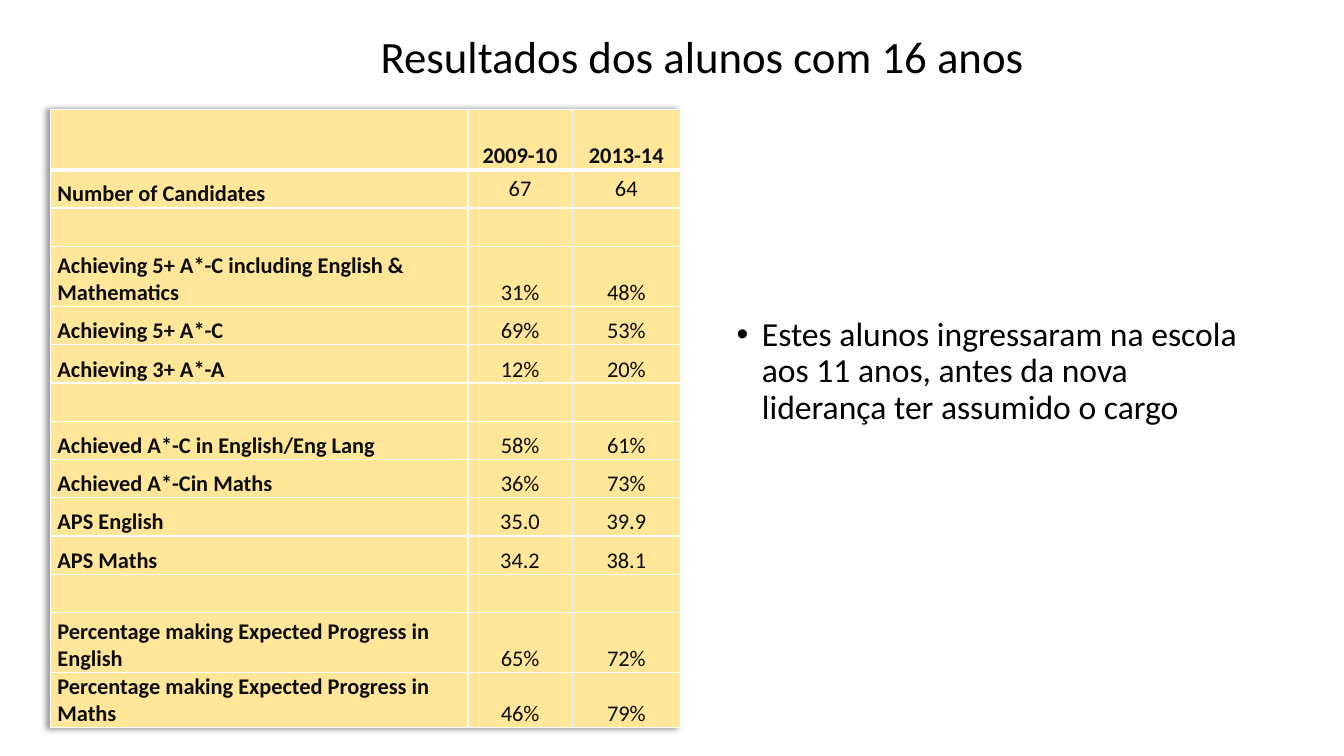
from lxml import etree
from pptx import Presentation
from pptx.dml.color import RGBColor
from pptx.enum.text import MSO_ANCHOR, PP_ALIGN
from pptx.oxml import parse_xml
from pptx.oxml.ns import nsdecls, qn
from pptx.util import Inches, Pt

CENTER, LEFT = PP_ALIGN.CENTER, PP_ALIGN.LEFT
BOTTOM, MIDDLE, TOP = MSO_ANCHOR.BOTTOM, MSO_ANCHOR.MIDDLE, MSO_ANCHOR.TOP
HUES = {"text": "000000", "cell": "0D0D0D", "sand": "FFE699", "rule": "FFFFFF"}

deck = Presentation()
deck.slide_width, deck.slide_height = Inches(13.33), Inches(7.5)
slide = deck.slides.add_slide(deck.slide_layouts[6])

# The slide is a grid of 160 columns by 90 rows of square units
UNIT = deck.slide_height / 90


def grid(*spans):
    """Turn grid units into slide lengths."""
    return [round(span * UNIT) for span in spans]


def write(para, text, size, hue, bold=False):
    run = para.add_run()
    run.text = text
    run.font.name, run.font.size, run.font.bold = "Calibri", Pt(size), bold
    run.font.color.rgb = RGBColor.from_string(HUES[hue])


# Bulleted remark, set beside the middle of the table
note = slide.shapes.add_textbox(*grid(86.5, 13, 62.5, 67.4)).text_frame
note.word_wrap, note.vertical_anchor = True, TOP
note.margin_top = grid(24.8)[0]
para = note.paragraphs[0]
para.line_spacing = 0.9
props = para._p.get_or_add_pPr()
props.set("marL", str(Inches(0.25)))
props.set("indent", str(-Inches(0.25)))
etree.SubElement(props, qn("a:buFont"), typeface="Arial")
etree.SubElement(props, qn("a:buChar"), char="•")
write(para, "Estes alunos ingressaram na escola aos 11 anos, "
      "antes da nova liderança ter assumido o cargo", 24, "text")

# Results table
BLANK = ("", "", "")
rows = [
    ("", "2009-10", "2013-14"),
    ("Number of Candidates", "67", "64"),
    BLANK,
    ("Achieving 5+ A*-C including English & Mathematics", "31%", "48%"),
    ("Achieving 5+ A*-C", "69%", "53%"),
    ("Achieving 3+ A*-A", "12%", "20%"),
    BLANK,
    ("Achieved A*-C in English/Eng Lang", "58%", "61%"),
    ("Achieved A*-Cin Maths", "36%", "73%"),
    ("APS English", "35.0", "39.9"),
    ("APS Maths", "34.2", "38.1"),
    BLANK,
    ("Percentage making Expected Progress in English", "65%", "72%"),
    ("Percentage making Expected Progress in Maths", "46%", "79%"),
]
last = len(rows) - 1
tall = {0: 7.2, 3: 7.2, 12: 7.2, last: 6.5}
table = slide.shapes.add_table(len(rows), 3, *grid(6, 13, 75, 73.6)).table
table.first_row = table.horz_banding = False
for col, width in zip(table.columns, grid(49.7, 12.4, 12.9)):
    col.width = width

for r, row in enumerate(rows):
    table.rows[r].height = grid(tall.get(r, 4.55))[0]
    for c, text in enumerate(row):
        cell = table.cell(r, c)
        cell.margin_left = cell.margin_right = Inches(0.07)
        cell.margin_top = cell.margin_bottom = 0
        cell.vertical_anchor = MIDDLE if r == 1 and c else BOTTOM
        thick = {0: "lnB", 1: "lnT"}.get(r)
        for side in ("lnL", "lnR", "lnT", "lnB"):
            line = etree.SubElement(cell._tc.get_or_add_tcPr(), qn("a:" + side),
                                    w=str(Pt(3 if side == thick else 1)))
            fill = etree.SubElement(line, qn("a:solidFill"))
            etree.SubElement(fill, qn("a:srgbClr"), val=HUES["rule"])
        cell.fill.solid()
        cell.fill.fore_color.rgb = RGBColor.from_string(HUES["sand"])
        para = cell.text_frame.paragraphs[0]
        para.alignment = CENTER if c else LEFT
        if text:
            write(para, text, 16, "cell", bold=r == 0 or c == 0)
        else:
            para.font.size = Pt(16)

# Soft shadow on the left of the table
table._tbl.tblPr.insert(0, parse_xml(
    f'<a:effectLst {nsdecls("a")}><a:outerShdw blurRad="50800" dist="38100" '
    'dir="10800000" algn="r" rotWithShape="0"><a:srgbClr val="000000">'
    '<a:alpha val="40000"/></a:srgbClr></a:outerShdw></a:effectLst>'))

# Title
title = slide.shapes.add_textbox(*grid(35.6, 2.8, 96, 7.7)).text_frame
title.word_wrap, title.vertical_anchor = True, BOTTOM
para = title.paragraphs[0]
para.alignment, para.line_spacing = CENTER, 0.9
write(para, "Resultados dos alunos com 16 anos", 32, "text")

deck.save("out.pptx")
